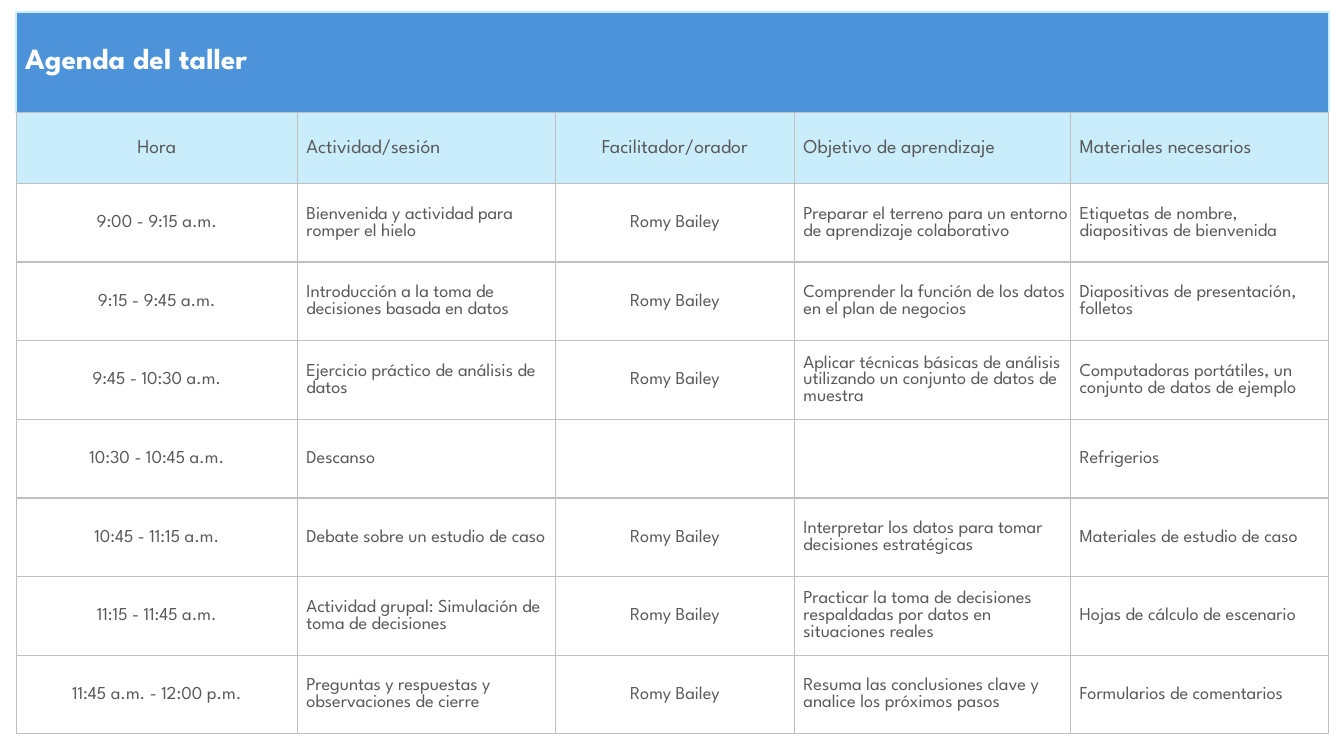
from lxml import etree
from pptx import Presentation
from pptx.dml.color import RGBColor
from pptx.enum.text import MSO_ANCHOR, PP_ALIGN
from pptx.oxml.ns import qn
from pptx.util import Inches, Pt

LEFT, CENTER = PP_ALIGN.LEFT, PP_ALIGN.CENTER
MIDDLE = MSO_ANCHOR.MIDDLE

FONT = "League Spartan"
BLUE, PALE_BLUE, GRAY, TEXT_GRAY, WHITE = "4D93D9", "CAEDFB", "BFBFBF", "595959", "FFFFFF"

TITLE = "Agenda del taller"
HEADINGS = ["Hora", "Actividad/sesión", "Facilitador/orador",
            "Objetivo de aprendizaje", "Materiales necesarios"]
SPEAKER = "Romy Bailey"
SESSIONS = [
    ["9:00 - 9:15 a.m.", "Bienvenida y actividad para romper el hielo", SPEAKER,
     "Preparar el terreno para un entorno de aprendizaje colaborativo",
     "Etiquetas de nombre, diapositivas de bienvenida"],
    ["9:15 - 9:45 a.m.", "Introducción a la toma de decisiones basada en datos", SPEAKER,
     "Comprender la función de los datos en el plan de negocios",
     "Diapositivas de presentación, folletos"],
    ["9:45 - 10:30 a.m.", "Ejercicio práctico de análisis de datos", SPEAKER,
     "Aplicar técnicas básicas de análisis utilizando un conjunto de datos de muestra",
     "Computadoras portátiles, un conjunto de datos de ejemplo"],
    ["10:30 - 10:45 a.m.", "Descanso", "", "", "Refrigerios"],
    ["10:45 - 11:15 a.m.", "Debate sobre un estudio de caso", SPEAKER,
     "Interpretar los datos para tomar decisiones estratégicas",
     "Materiales de estudio de caso"],
    ["11:15 - 11:45 a.m.", "Actividad grupal: Simulación de toma de decisiones", SPEAKER,
     "Practicar la toma de decisiones respaldadas por datos en situaciones reales",
     "Hojas de cálculo de escenario"],
    ["11:45 a.m. - 12:00 p.m.", "Preguntas y respuestas y observaciones de cierre", SPEAKER,
     "Resuma las conclusiones clave y analice los próximos pasos",
     "Formularios de comentarios"],
]
COLUMN_WIDTHS = [2.79, 2.56, 2.37, 2.74, 2.56]
ROW_HEIGHTS = [1, 0.7] + [0.78] * len(SESSIONS)
CENTERED_COLUMNS = (0, 2)


def fill_cell(cell, text, size=13, color=TEXT_GRAY, bold=False, align=LEFT, fill=None):
    cell.vertical_anchor = MIDDLE
    cell.margin_left = Inches(0.01 if align == CENTER else 0.09)
    cell.margin_top = cell.margin_right = Inches(0.01)
    cell.margin_bottom = 0
    if fill:
        cell.fill.solid()
        cell.fill.fore_color.rgb = RGBColor.from_string(fill)
    else:
        cell.fill.background()
    paragraph = cell.text_frame.paragraphs[0]
    paragraph.alignment = align
    paragraph.font.size = Pt(size)
    if text:
        run = paragraph.add_run()
        run.text = text
        run.font.name = FONT
        run.font.size = Pt(size)
        run.font.bold = bold
        run.font.color.rgb = RGBColor.from_string(color)


def set_borders(cell, **sides):
    """Draw the sides L, R, T, B, each given as (colour, points)."""
    properties = cell._tc.get_or_add_tcPr()
    for position, side in enumerate("LRTB"):
        color, width = sides.get(side, (GRAY, 1))
        line = etree.Element(qn("a:ln" + side), w=str(Pt(width)))
        solid = etree.SubElement(line, qn("a:solidFill"))
        etree.SubElement(solid, qn("a:srgbClr"), val=color)
        properties.insert(position, line)


prs = Presentation()
prs.slide_width, prs.slide_height = Inches(13.33), Inches(7.5)
slide = prs.slides.add_slide(prs.slide_layouts[6])

agenda = slide.shapes.add_table(
    len(ROW_HEIGHTS), len(COLUMN_WIDTHS), Inches(0.16), Inches(0.12),
    Inches(sum(COLUMN_WIDTHS)), Inches(sum(ROW_HEIGHTS))).table
agenda.first_row = agenda.horz_banding = False
for column, width in zip(agenda.columns, COLUMN_WIDTHS):
    column.width = Inches(width)
for row, height in zip(agenda.rows, ROW_HEIGHTS):
    row.height = Inches(height)

# Title band across all columns
agenda.cell(0, 0).merge(agenda.cell(0, len(COLUMN_WIDTHS) - 1))
fill_cell(agenda.cell(0, 0), TITLE, size=21, color=WHITE, bold=True, fill=BLUE)
title_edge = (PALE_BLUE, 1.5)
for cell in agenda.rows[0].cells:
    set_borders(cell, L=title_edge, R=title_edge, T=title_edge)

# Headings, then one row per session
for r, entries in enumerate([HEADINGS] + SESSIONS, start=1):
    heading = r == 1
    for c, entry in enumerate(entries):
        cell = agenda.cell(r, c)
        fill_cell(cell, entry, size=14 if heading else 13,
                  align=CENTER if c in CENTERED_COLUMNS else LEFT,
                  fill=PALE_BLUE if heading else None)
        set_borders(cell)

prs.save("out.pptx")
